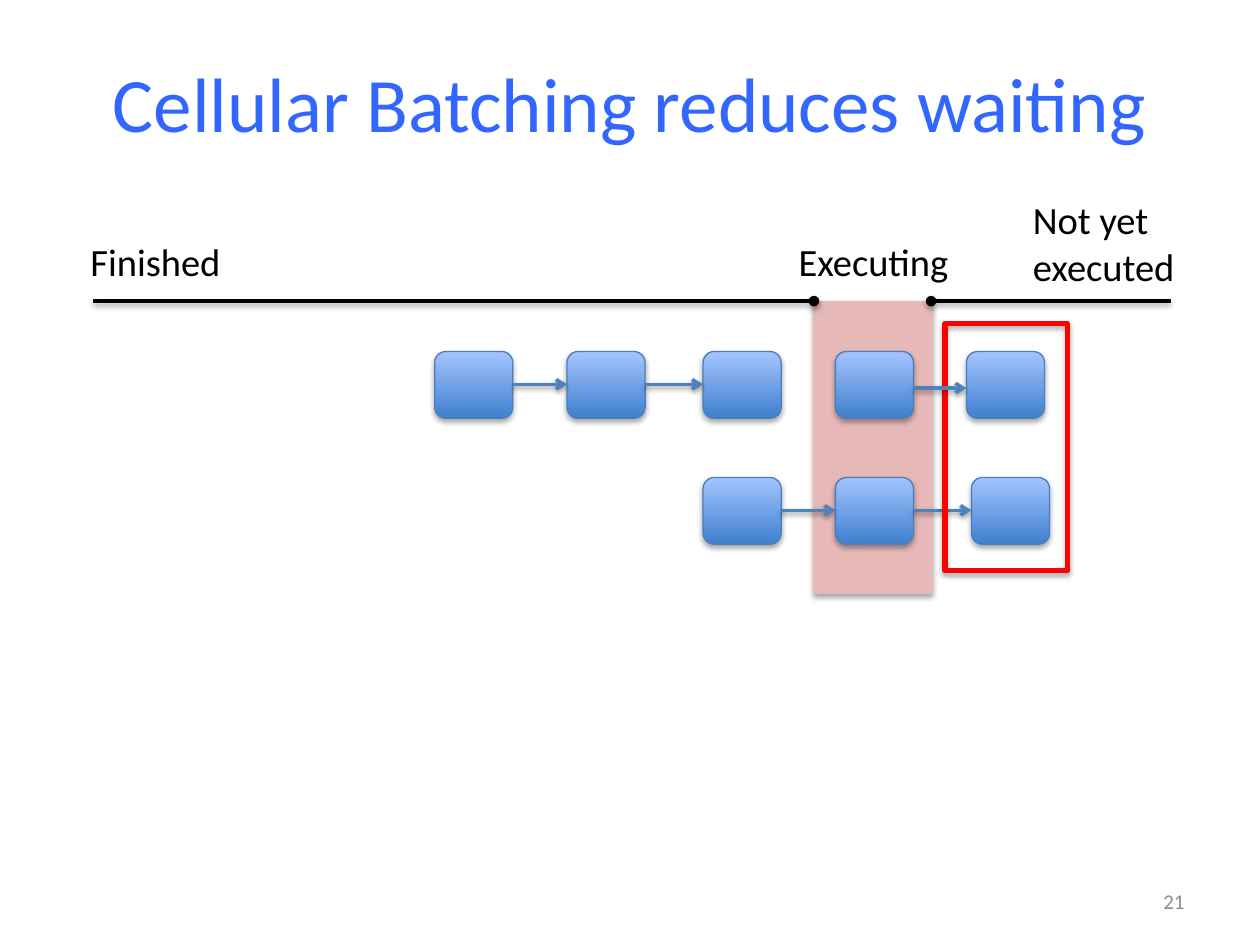
import pptx
import pptx.dml.color
import pptx.enum.shapes
import pptx.enum.text
import pptx.oxml
import pptx.oxml.ns
import pptx.util

Inches, Pt = pptx.util.Inches, pptx.util.Pt
SHAPE = pptx.enum.shapes.MSO_SHAPE
ALIGN = pptx.enum.text.PP_ALIGN
ANCHOR = pptx.enum.text.MSO_ANCHOR

FONT = "Calibri"
COLORS = {
    "title": "3366FF", "text": "000000", "number": "8C8C8C",
    "band": "E6B9B8", "frame": "FF0000", "arrow": "4F81BD",
    "cell_line": "4B7EBC", "cell_bottom": "3F80CE", "cell_top": "A4C4FF",
}
CELL_W, CELL_H = 0.62, 0.53
TIMELINE_Y = 2.39


def rgb(name):
    return pptx.dml.color.RGBColor.from_string(COLORS[name])


def style_text(p, size, color, align):
    p.font.name, p.font.size = FONT, Pt(size)
    p.font.color.rgb = rgb(color)
    p.alignment = align


def add_text(slide, box, lines, size=22, color="text", align=ALIGN.LEFT,
             anchor=ANCHOR.TOP, wrap=False):
    tf = slide.shapes.add_textbox(*map(Inches, box)).text_frame
    tf.word_wrap, tf.vertical_anchor = wrap, anchor
    tf.text = "\n".join(lines)
    for p in tf.paragraphs:
        style_text(p, size, color, align)


def add_box(slide, kind, box, line, width):
    """Add an outlined shape that keeps the theme's soft shadow."""
    sp = slide.shapes.add_shape(kind, *map(Inches, box))
    sp.line.color.rgb, sp.line.width = rgb(line), Pt(width)
    return sp


def add_line(slide, x1, x2, y, color, end):
    """Add a horizontal line with an end mark at x2; the theme shadow stays."""
    line = slide.shapes.add_connector(
        pptx.enum.shapes.MSO_CONNECTOR.STRAIGHT,
        Inches(x1), Inches(y), Inches(x2), Inches(y))
    line.line.color.rgb, line.line.width = rgb(color), Pt(2)
    line.line._get_or_add_ln().append(pptx.oxml.parse_xml(
        f'<a:tailEnd {pptx.oxml.ns.nsdecls("a")} type="{end}"/>'))


def add_cell(slide, x, y):
    sp = add_box(slide, SHAPE.ROUNDED_RECTANGLE, (x, y, CELL_W, CELL_H),
                 "cell_line", 0.75)
    sp.fill.gradient()
    sp.fill.gradient_angle = 90
    for stop, color in zip(sp.fill.gradient_stops, ("cell_bottom", "cell_top")):
        stop.color.rgb = rgb(color)


def add_chain(slide, xs, y, arrow_y):
    """Add a row of cells, each joined to the next by an arrow."""
    for x in xs:
        add_cell(slide, x, y)
    for x, following in zip(xs, xs[1:]):
        add_line(slide, x + CELL_W, following, arrow_y, "arrow", "arrow")


def main():
    prs = pptx.Presentation()
    prs.slide_width, prs.slide_height = Inches(10), Inches(7.5)
    slide = prs.slides.add_slide(prs.slide_layouts[5])

    title = slide.shapes.title
    title.left, title.top, title.width, title.height = map(
        Inches, (0.5, 0.18, 9, 1.25))
    title.text_frame.text = "Cellular Batching reduces waiting"
    title.text_frame.vertical_anchor = ANCHOR.MIDDLE
    style_text(title.text_frame.paragraphs[0], 44, "title", ALIGN.CENTER)

    band = add_box(slide, SHAPE.RECTANGLE, (6.46, TIMELINE_Y, 0.94, 2.32),
                   "band", 0.75)
    band.fill.solid()
    band.fill.fore_color.rgb = rgb("band")
    add_line(slide, 9.29, 7.39, TIMELINE_Y, "text", "oval")
    add_line(slide, 0.74, 6.46, TIMELINE_Y, "text", "oval")

    add_chain(slide, [3.45, 4.5, 5.58], 2.79, 3.05)
    add_chain(slide, [5.58, 6.63, 7.71], 3.79, 4.05)
    frame = add_box(slide, SHAPE.RECTANGLE, (7.5, 2.57, 0.97, 1.96), "frame", 3)
    frame.fill.background()
    add_chain(slide, [6.63, 7.67], 2.79, 3.08)

    add_text(slide, (0.62, 1.84, 1.24, 0.47), ["Finished"])
    add_text(slide, (6.24, 1.84, 1.4, 0.47), ["Executing"])
    add_text(slide, (8.1, 1.51, 1.34, 0.84), ["Not yet", "executed"])
    add_text(slide, (7.17, 6.95, 2.33, 0.4), ["21"], 12, "number",
             ALIGN.RIGHT, ANCHOR.MIDDLE, wrap=True)

    prs.save("out.pptx")


if __name__ == "__main__":
    main()
